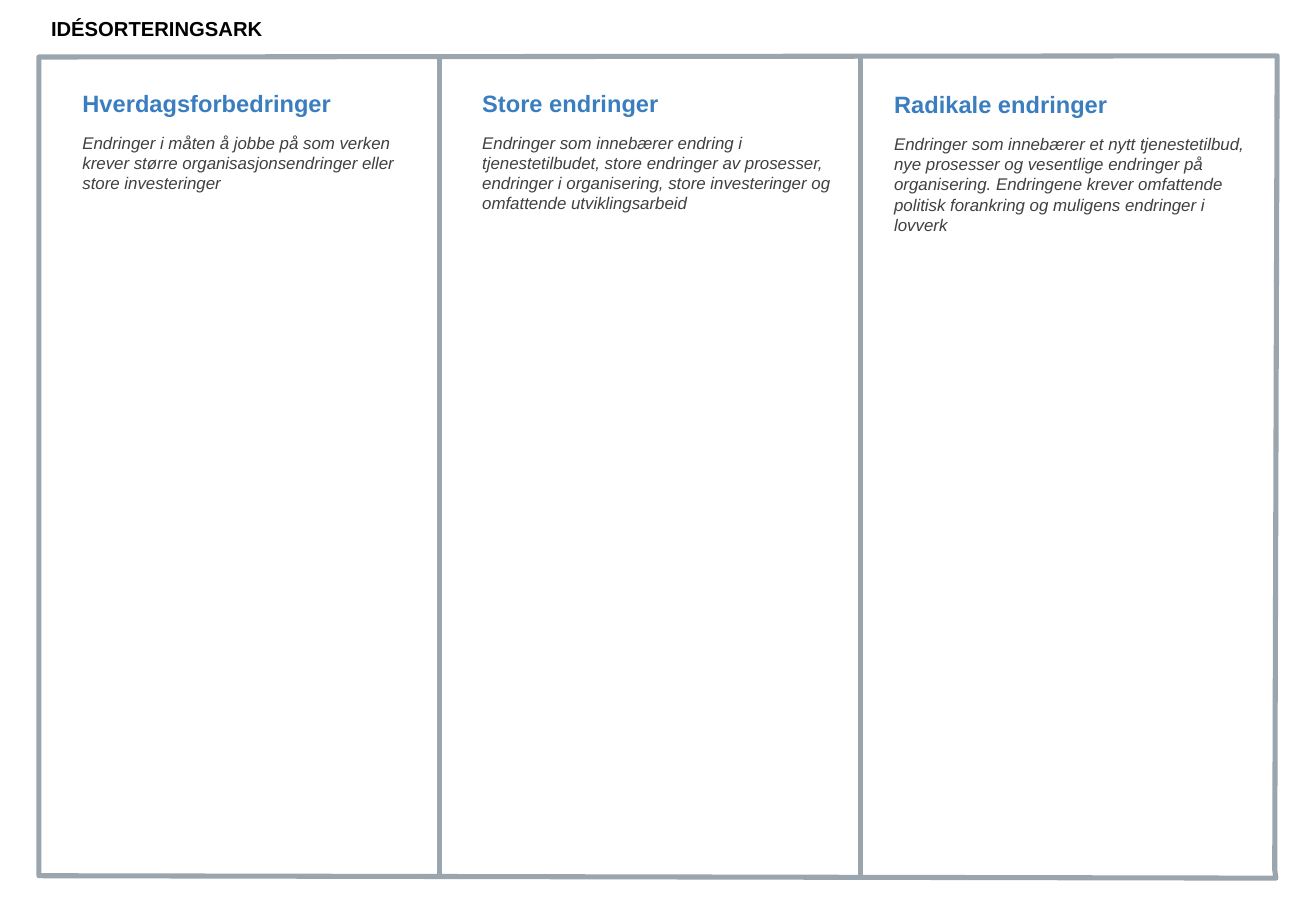
from pptx import Presentation
from pptx.dml.color import RGBColor
from pptx.enum.shapes import MSO_CONNECTOR
from pptx.enum.text import MSO_ANCHOR, MSO_AUTO_SIZE, PP_ALIGN
from pptx.oxml.ns import qn
from pptx.util import Emu, Pt
from lxml import etree

PX = 9144  # 100 px to the inch
FONT = "Arial"
BLACK, BLUE, DARK_GREY, LINE_GREY = "000000", "3A7EC0", "404040", "9BA5AE"

TITLE = "IDÉSORTERINGSARK"
TITLE_BOX = (32, 8, 251, 31)
FRAME = [(1049, 716), (1051, 46), (32, 47), (32, 721), (1050, 723)]
DIVIDERS = [362, 708]
DIVIDER_TOP, DIVIDER_BOTTOM = 46, 723
COLUMNS = [
    ((58, 68, 309, 465), "Hverdagsforbedringer",
     "Endringer i måten å jobbe på som verken krever større "
     "organisasjonsendringer eller store investeringer"),
    ((387, 68, 311, 418), "Store endringer",
     "Endringer som innebærer endring i tjenestetilbudet, store endringer av "
     "prosesser, endringer i organisering, store investeringer og omfattende "
     "utviklingsarbeid"),
    ((726, 69, 311, 418), "Radikale endringer",
     "Endringer som innebærer et nytt tjenestetilbud, nye prosesser og "
     "vesentlige endringer på organisering. Endringene krever omfattende "
     "politisk forankring og muligens endringer i lovverk"),
]


def px(*lengths):
    return [Emu(length * PX) for length in lengths]


def color(hex_string):
    return RGBColor.from_string(hex_string)


def add_run(paragraph, text, size, hex_string, bold=False, italic=False):
    run = paragraph.add_run()
    run.text = text
    font = run.font
    font.name, font.size = FONT, Pt(size)
    font.bold, font.italic = bold, italic
    font.color.rgb = color(hex_string)


def style_line(line):
    line.color.rgb = color(LINE_GREY)
    line.width = Pt(3)


def add_title(slide):
    title = slide.shapes.title
    title.left, title.top, title.width, title.height = px(*TITLE_BOX)
    frame = title.text_frame
    frame.auto_size = MSO_AUTO_SIZE.NONE
    frame.vertical_anchor = MSO_ANCHOR.MIDDLE
    paragraph = frame.paragraphs[0]
    paragraph.alignment = PP_ALIGN.LEFT
    add_run(paragraph, TITLE, 12, BLACK, bold=True)


def add_frame(slide):
    builder = slide.shapes.build_freeform(*FRAME[0], scale=PX)
    builder.add_line_segments(FRAME[1:], close=True)
    shape = builder.convert_to_shape()
    shape.shadow.inherit = False
    shape.fill.background()
    style_line(shape.line)


def add_divider(slide, x):
    divider = slide.shapes.add_connector(
        MSO_CONNECTOR.STRAIGHT, *px(x, DIVIDER_BOTTOM, x, DIVIDER_TOP))
    style_line(divider.line)
    etree.SubElement(divider._element.spPr, qn("a:effectLst"))


def add_column(slide, box, heading, description):
    frame = slide.shapes.add_textbox(*px(*box)).text_frame
    frame.word_wrap = True
    add_run(frame.paragraphs[0], heading, 14, BLUE, bold=True)
    paragraph = frame.add_paragraph()
    paragraph.space_before = Pt(9)
    add_run(paragraph, description, 10, DARK_GREY, italic=True)


def main():
    presentation = Presentation()
    presentation.slide_width, presentation.slide_height = px(1083, 750)
    slide = presentation.slides.add_slide(presentation.slide_layouts[5])
    add_title(slide)
    add_frame(slide)
    for x in DIVIDERS:
        add_divider(slide, x)
    for box, heading, description in COLUMNS:
        add_column(slide, box, heading, description)
    presentation.save("out.pptx")


if __name__ == "__main__":
    main()
